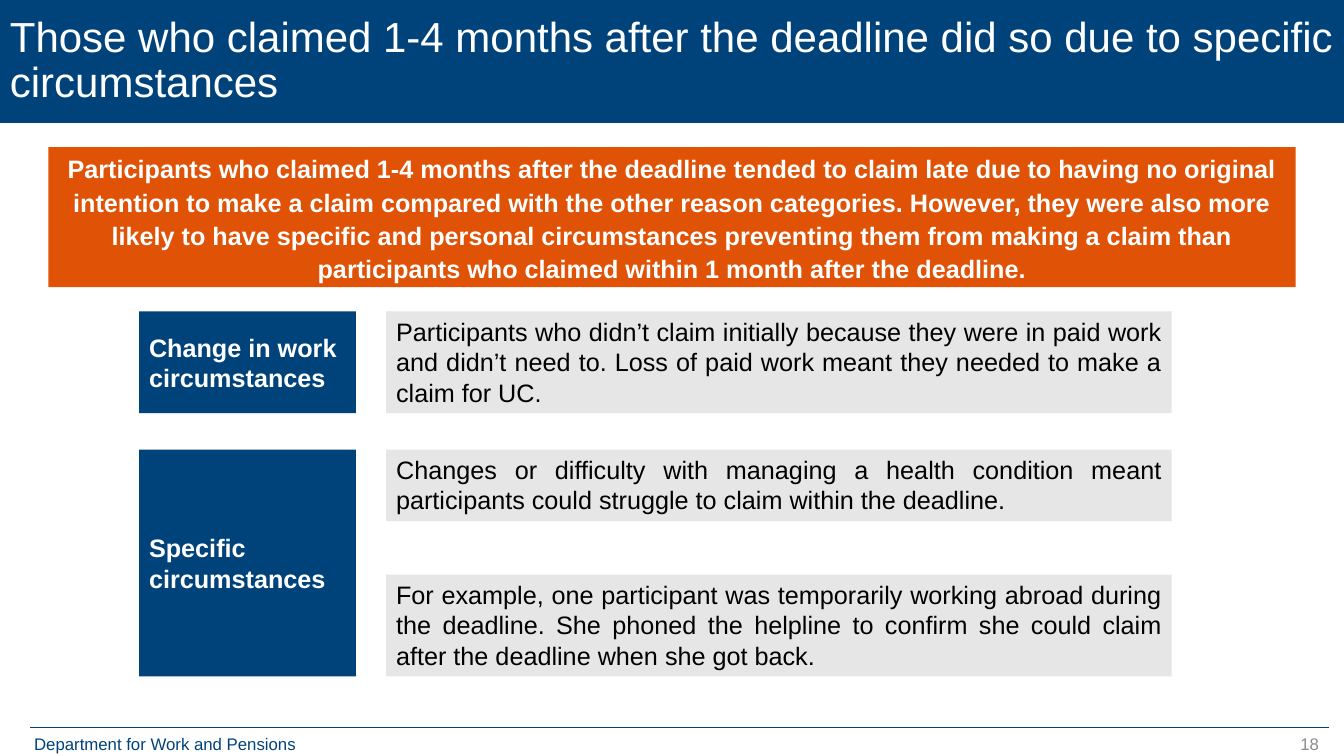
from dataclasses import dataclass

import pptx
import pptx.dml.color
import pptx.enum.shapes
import pptx.enum.text
import pptx.oxml.ns
import pptx.slide
import pptx.util
from lxml import etree

Inches = pptx.util.Inches
Pt = pptx.util.Pt
RGBColor = pptx.dml.color.RGBColor
Align = pptx.enum.text.PP_ALIGN
Anchor = pptx.enum.text.MSO_ANCHOR

NAVY = RGBColor(0x00, 0x43, 0x7B)
ORANGE = RGBColor(0xE0, 0x52, 0x06)
PALE_GREY = RGBColor(0xE7, 0xE6, 0xE6)
PAGE_GREY = RGBColor(0x8C, 0x8C, 0x8C)
WHITE = RGBColor(0xFF, 0xFF, 0xFF)
BLACK = RGBColor(0x00, 0x00, 0x00)

LABEL_LEFT, LABEL_WIDTH = 1.38, 2.15
DETAIL_LEFT, DETAIL_WIDTH = 3.83, 7.79


@dataclass(frozen=True)
class Panel:
    text: str
    left: float
    top: float
    width: float
    height: float
    color: RGBColor
    fill: RGBColor | None = None
    size: int = 18
    bold: bool = False
    align: Align = Align.LEFT
    anchor: Anchor = Anchor.MIDDLE
    margin_x: float = 0.1
    margin_y: float = 0.05
    line_spacing: float = 1.0
    space_before: int = 0


def label(text: str, top: float, height: float) -> Panel:
    return Panel(text, LABEL_LEFT, top, LABEL_WIDTH, height, WHITE, NAVY, bold=True)


def detail(text: str, top: float, height: float) -> Panel:
    return Panel(text, DETAIL_LEFT, top, DETAIL_WIDTH, height, BLACK, PALE_GREY,
                 align=Align.JUSTIFY, anchor=Anchor.TOP)


PANELS = [
    Panel("Department for Work and Pensions", 0.24, 7.23, 3.23, 0.3, NAVY,
          size=12, align=Align.JUSTIFY, anchor=Anchor.TOP),
    Panel("18", 10.18, 7.23, 3, 0.4, PAGE_GREY,
          size=12, align=Align.RIGHT, anchor=Anchor.TOP),
    Panel("Those who claimed 1-4 months after the deadline did so due to specific "
          "circumstances", 0, 0, 13.33, 1.22, WHITE, NAVY, size=30, line_spacing=0.9),
    Panel("Participants who claimed 1-4 months after the deadline tended to claim late "
          "due to having no original intention to make a claim compared with the other "
          "reason categories. However, they were also more likely to have specific and "
          "personal circumstances preventing them from making a claim than participants "
          "who claimed within 1 month after the deadline.",
          0.48, 1.46, 12.37, 1.39, WHITE, ORANGE, bold=True, align=Align.CENTER,
          margin_x=0.16, margin_y=0.08, line_spacing=1.1, space_before=24),
    label("Change in work circumstances", 3.09, 1.01),
    detail("Participants who didn’t claim initially because they were in paid work and "
           "didn’t need to. Loss of paid work meant they needed to make a claim for UC.",
           3.09, 1.01),
    label("Specific circumstances", 4.46, 2.25),
    detail("Changes or difficulty with managing a health condition meant participants "
           "could struggle to claim within the deadline.", 4.46, 0.71),
    detail("For example, one participant was temporarily working abroad during the "
           "deadline. She phoned the helpline to confirm she could claim after the "
           "deadline when she got back.", 5.7, 1.01),
]


def draw_panel(slide: pptx.slide.Slide, panel: Panel) -> None:
    bounds = [Inches(v) for v in (panel.left, panel.top, panel.width, panel.height)]
    if panel.fill is None:
        box = slide.shapes.add_textbox(*bounds)
    else:
        box = slide.shapes.add_shape(pptx.enum.shapes.MSO_SHAPE.RECTANGLE, *bounds)
        box.shadow.inherit = False
        box.fill.solid()
        box.fill.fore_color.rgb = panel.fill
        box.line.fill.background()

    frame = box.text_frame
    frame.word_wrap = True
    frame.vertical_anchor = panel.anchor
    frame.margin_left = frame.margin_right = Inches(panel.margin_x)
    frame.margin_top = frame.margin_bottom = Inches(panel.margin_y)

    paragraph = frame.paragraphs[0]
    paragraph.text = panel.text
    paragraph.alignment = panel.align
    paragraph.line_spacing = panel.line_spacing
    paragraph.space_before = Pt(panel.space_before)
    paragraph.font.name = "Arial"
    paragraph.font.size = Pt(panel.size)
    paragraph.font.bold = panel.bold
    paragraph.font.color.rgb = panel.color


def draw_footer_rule(slide: pptx.slide.Slide) -> None:
    rule = slide.shapes.add_connector(
        pptx.enum.shapes.MSO_CONNECTOR.STRAIGHT,
        Inches(0.3), Inches(7.22), Inches(13.18), Inches(7.22))
    rule.line.color.rgb = NAVY
    rule.line.width = Pt(0.5)
    properties = rule.element.find(pptx.oxml.ns.qn("p:spPr"))
    etree.SubElement(properties, pptx.oxml.ns.qn("a:effectLst"))


def main() -> None:
    deck = pptx.Presentation()
    deck.slide_width = Inches(13.33)
    deck.slide_height = Inches(7.5)
    slide = deck.slides.add_slide(deck.slide_layouts[6])
    draw_footer_rule(slide)
    for panel in PANELS:
        draw_panel(slide, panel)
    deck.save("out.pptx")


if __name__ == "__main__":
    main()
